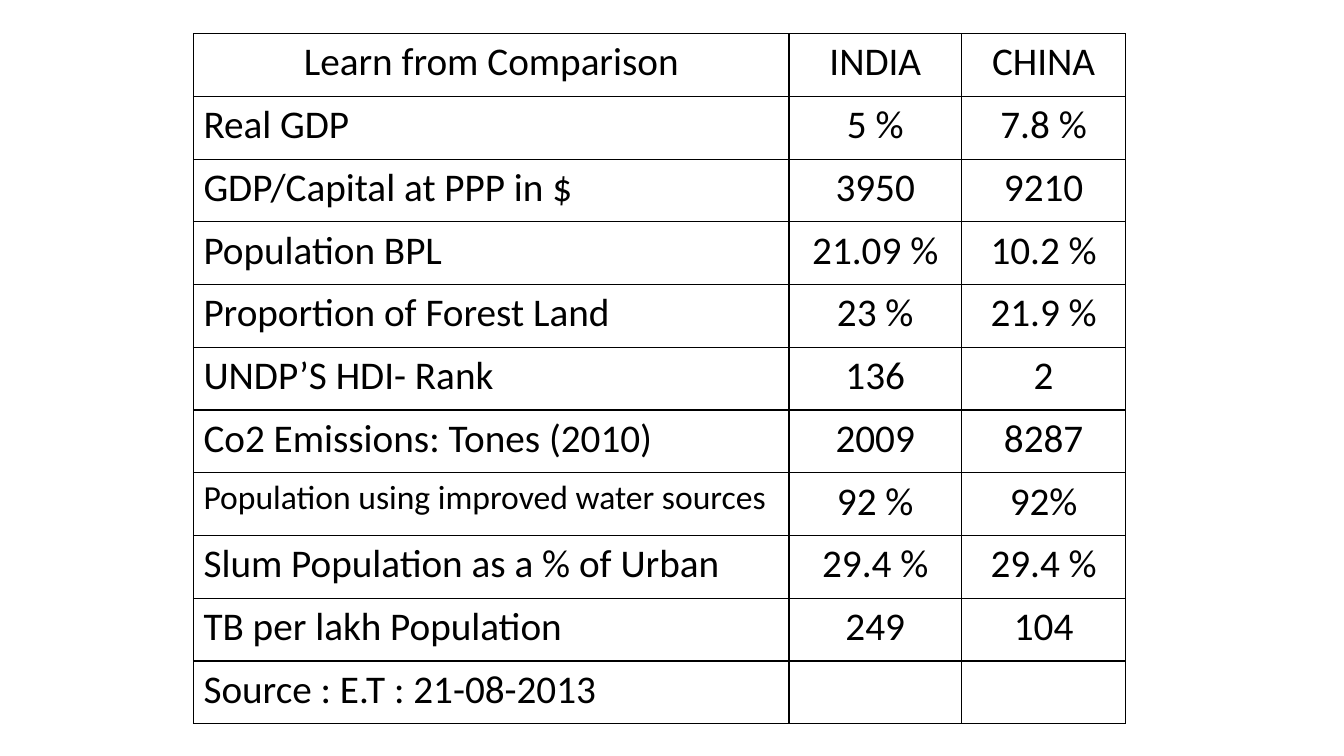
"""Builds a one-slide table comparing India and China."""
from lxml import etree
from pptx import Presentation
from pptx.dml.color import RGBColor
from pptx.enum.text import PP_ALIGN
from pptx.oxml.ns import qn
from pptx.util import Pt

LEFT, CENTER = PP_ALIGN.LEFT, PP_ALIGN.CENTER
BLANK_LAYOUT = 6
BORDER_TAGS = ("a:lnL", "a:lnR", "a:lnT", "a:lnB")

COLUMN_WIDTHS = (425.4, 123.2, 117.4)
ROW_HEIGHT = 44.83
SMALL_LABEL = "Population using improved water sources"
ROWS = (
    ("Learn from Comparison", "INDIA", "CHINA"),
    ("Real GDP", "5 %", "7.8 %"),
    ("GDP/Capital at PPP in $", "3950", "9210"),
    ("Population BPL", "21.09 %", "10.2 %"),
    ("Proportion of Forest Land", "23 %", "21.9 %"),
    ("UNDP’S HDI- Rank", "136", "2"),
    ("Co2 Emissions: Tones (2010)", "2009", "8287"),
    (SMALL_LABEL, "92 %", "92%"),
    ("Slum Population as a % of Urban", "29.4 %", "29.4 %"),
    ("TB per lakh Population", "249", "104"),
    ("Source : E.T : 21-08-2013", "", ""),
)


def rgb(value):
    return RGBColor.from_string(value)


class Deck:
    """Holds the style and the current slide."""

    font, size, small_size = "Calibri", 28, 24
    ink, paper, border = "000000", "FFFFFF", 1

    def __init__(self, width, height):
        self.prs = Presentation()
        self.prs.slide_width, self.prs.slide_height = Pt(width), Pt(height)

    def add_slide(self):
        self.s = self.prs.slides.add_slide(self.prs.slide_layouts[BLANK_LAYOUT])

    def set_borders(self, cell):
        tcPr = cell._tc.get_or_add_tcPr()
        for i, tag in enumerate(BORDER_TAGS):
            ln = etree.Element(qn(tag), w=str(Pt(self.border)))
            fill = etree.SubElement(ln, qn("a:solidFill"))
            etree.SubElement(fill, qn("a:srgbClr"), val=self.ink)
            tcPr.insert(i, ln)

    def fill_cell(self, cell, text, align):
        cell.fill.solid()
        cell.fill.fore_color.rgb = rgb(self.paper)
        self.set_borders(cell)
        p = cell.text_frame.paragraphs[0]
        p.text, p.alignment = text, align
        p.font.name = self.font
        p.font.size = Pt(self.small_size if text == SMALL_LABEL else self.size)
        p.font.bold = False
        p.font.color.rgb = rgb(self.ink)

    def add_table(self, left, top, widths, row_height, rows):
        frame = self.s.shapes.add_table(
            len(rows), len(widths), Pt(left), Pt(top),
            Pt(sum(widths)), Pt(row_height * len(rows)))
        table = frame.table
        table.first_row = table.horz_banding = False
        for column, width in zip(table.columns, widths):
            column.width = Pt(width)
        for r, values in enumerate(rows):
            table.rows[r].height = Pt(row_height)
            for c, text in enumerate(values):
                align = LEFT if r and not c else CENTER
                self.fill_cell(table.cell(r, c), text, align)


def main():
    deck = Deck(960, 540)
    deck.add_slide()
    deck.add_table(138.2, 24, COLUMN_WIDTHS, ROW_HEIGHT, ROWS)
    deck.prs.save("out.pptx")


if __name__ == "__main__":
    main()
